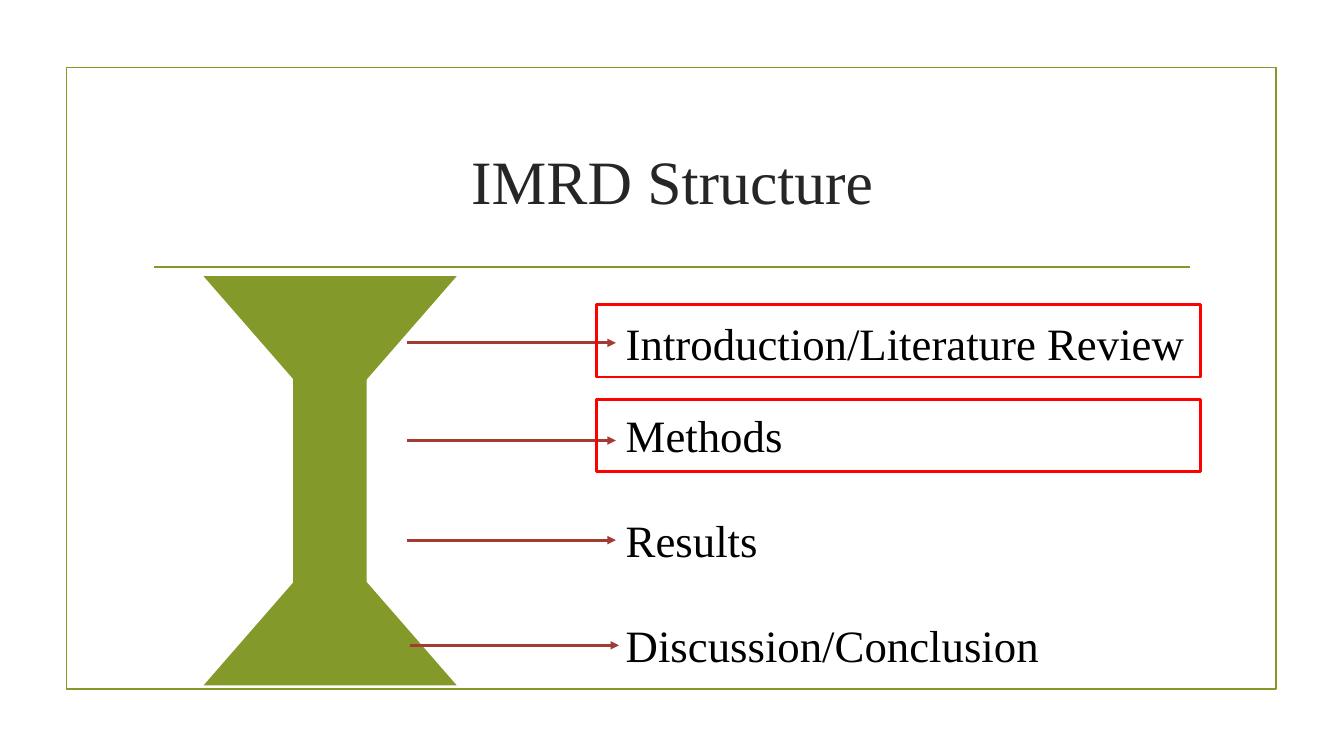
import pptx
import pptx.dml.color
import pptx.enum.shapes
import pptx.enum.text
import pptx.oxml
import pptx.oxml.ns
import pptx.util
from pptx.util import Cm

COLORS = {
    "olive": "83992A",
    "brick": "A23C33",
    "red": "FF0000",
    "title": "262626",
    "text": "000000",
}
SHAPES = pptx.enum.shapes.MSO_SHAPE


def rgb(name):
    return pptx.dml.color.RGBColor.from_string(COLORS[name])


def write_text(frame, text, size, color, font="Times New Roman", align="LEFT", anchor="TOP"):
    frame.word_wrap = True
    frame.auto_size = pptx.enum.text.MSO_AUTO_SIZE.NONE
    frame.vertical_anchor = pptx.enum.text.MSO_ANCHOR[anchor]
    para = frame.paragraphs[0]
    para.alignment = pptx.enum.text.PP_ALIGN[align]
    span = para.add_run()
    span.text = text
    span.font.name = font
    span.font.size = pptx.util.Pt(size)
    span.font.color.rgb = rgb(color)


class StructurePage:
    def __init__(self, deck):
        self.page = deck.slides.add_slide(deck.slide_layouts[5])
        self.heading_size = 44
        self.label_size = 32

    def title(self, text, left, top, width, height):
        box = self.page.shapes.title
        box.left, box.top, box.width, box.height = Cm(left), Cm(top), Cm(width), Cm(height)
        write_text(box.text_frame, text, self.heading_size, "title", align="CENTER", anchor="MIDDLE")

    def label(self, text, left, top, width, height):
        box = self.page.shapes.add_textbox(Cm(left), Cm(top), Cm(width), Cm(height))
        write_text(box.text_frame, text, self.label_size, "text")

    def solid(self, kind, left, top, width, height, rotation=0):
        shape = self.page.shapes.add_shape(kind, Cm(left), Cm(top), Cm(width), Cm(height))
        shape.shadow.inherit = False
        shape.fill.solid()
        shape.fill.fore_color.rgb = rgb("olive")
        shape.line.fill.background()
        shape.rotation = rotation

    def outline(self, color, weight, left, top, width, height):
        shape = self.page.shapes.add_shape(
            SHAPES.RECTANGLE, Cm(left), Cm(top), Cm(width), Cm(height))
        shape.shadow.inherit = False
        shape.fill.background()
        shape.line.color.rgb = rgb(color)
        shape.line.width = pptx.util.Pt(weight)

    def line(self, color, weight, left, right, height, arrow=False):
        connector = self.page.shapes.add_connector(
            pptx.enum.shapes.MSO_CONNECTOR.STRAIGHT, Cm(left), Cm(height), Cm(right), Cm(height))
        connector.line.color.rgb = rgb(color)
        connector.line.width = pptx.util.Pt(weight)
        if arrow:
            head = pptx.oxml.parse_xml(
                f'<a:tailEnd {pptx.oxml.ns.nsdecls("a")} type="triangle"/>')
            connector.line._get_or_add_ln().append(head)
        properties = connector._element.spPr
        properties.append(pptx.oxml.parse_xml(f'<a:effectLst {pptx.oxml.ns.nsdecls("a")}/>'))


def main():
    deck = pptx.Presentation()
    deck.slide_width, deck.slide_height = Cm(33.87), Cm(19.05)
    page = StructurePage(deck)

    page.outline("olive", 1.25, 1.68, 1.7, 30.48, 15.67)
    page.line("olive", 1.25, 3.89, 30, 6.73)
    page.title("IMRD Structure", 3.61, 2.72, 26.67, 3.63)

    for top, rotation in ((6.96, 0), (13.61, 180)):
        page.solid(SHAPES.FLOWCHART_MERGE, 5.13, top, 6.38, 3.66, rotation)
    page.solid(SHAPES.RECTANGLE, 7.39, 9.42, 1.85, 5.36)

    sections = (
        ("Introduction/Literature Review", 7.82, 8.64, 10.26),
        ("Methods", 10.16, 11.1, 10.26),
        ("Results", 12.8, 13.61, 10.26),
        ("Discussion/Conclusion", 15.44, 16.26, 10.34),
    )
    for text, top, arrow_height, arrow_left in sections:
        page.label(text, 15.52, top, 14.76, 1.63)
        page.line("brick", 2, arrow_left, arrow_left + 5.26, arrow_height, arrow=True)

    for top in (7.67, 10.06):
        page.outline("red", 2, 15.04, top, 15.21, 1.83)

    deck.save("out.pptx")


if __name__ == "__main__":
    main()
